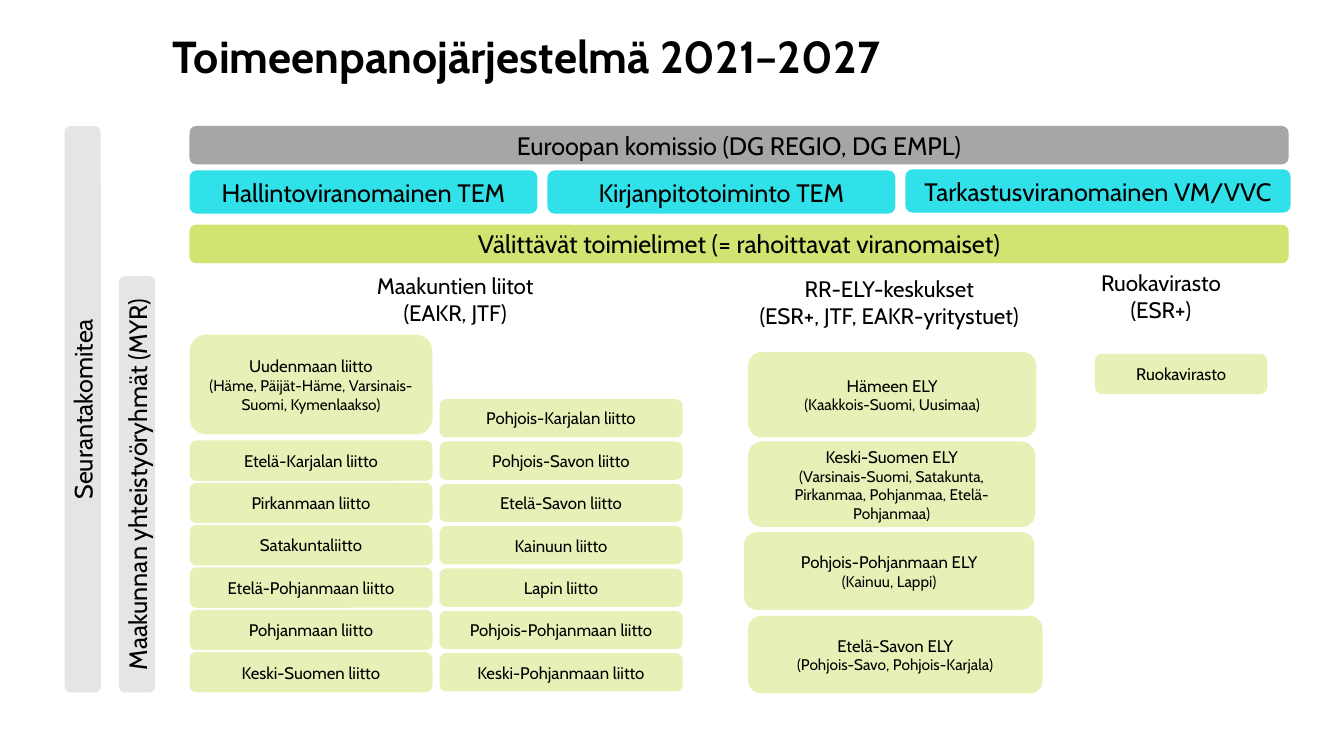
from lxml.etree import SubElement
from pptx import Presentation
from pptx.dml.color import RGBColor
from pptx.enum.shapes import MSO_SHAPE
from pptx.enum.text import MSO_ANCHOR, MSO_AUTO_SIZE, PP_ALIGN
from pptx.oxml.ns import qn
from pptx.util import Inches, Pt

HUES = {"text": "000000", "grey": "A6A6A6", "pale": "E5E5E5",
        "cyan": "31E1E9", "lime": "D1E371"}
FONT = "Cabin"
CELL = Inches(0.1)
LEFT, TOP, STEP = 18.8, 12.5, 4.2
WIDE, FULL = 24.1, 109

HEADS = [
    ("Maakuntien liitot (EAKR, JTF)", 34.6, 27, 21.1),
    ("RR-ELY-keskukset\n(ESR+, JTF, EAKR-yritystuet)", 73.6, 27.3, 29.2),
    ("Ruokavirasto\n(ESR+)", 104.6, 26.7, 21.1),
]
ROLES = [
    ("Hallintoviranomainen TEM", LEFT, 16.9, 34.5),
    ("Kirjanpitotoiminto TEM", 54.3, 16.9, 34.5),
    ("Tarkastusviranomainen VM/VVC", 89.8, 16.8, 38.2),
]
UNIONS = [
    (LEFT, 43.7, 4, ["Etelä-Karjalan liitto", "Pirkanmaan liitto",
                     "Satakuntaliitto", "Etelä-Pohjanmaan liitto",
                     "Pohjanmaan liitto", "Keski-Suomen liitto"]),
    (43.6, 39.6, 3.8, ["Pohjois-Karjalan liitto", "Pohjois-Savon liitto",
                       "Etelä-Savon liitto", "Kainuun liitto",
                       "Lapin liitto", "Pohjois-Pohjanmaan liitto",
                       "Keski-Pohjanmaan liitto"]),
]
UNITS = [
    ("Uudenmaan liitto\n(Häme, Päijät-Häme, Varsinais-Suomi, Kymenlaakso)",
     LEFT, 33.2, WIDE, 9.9),
    ("Hämeen ELY\n(Kaakkois-Suomi, Uusimaa)", 74.2, 34.9, 28.6, 8.5),
    ("Keski-Suomen ELY\n(Varsinais-Suomi, Satakunta, Pirkanmaa, Pohjanmaa, "
     "Etelä-Pohjanmaa)", 74.2, 43.8, 28.5, 8.5),
    ("Pohjois-Pohjanmaan ELY\n(Kainuu, Lappi)", 73.8, 52.8, 28.8, 7.7),
    ("Etelä-Savon ELY\n(Pohjois-Savo, Pohjois-Karjala)",
     74.2, 61.1, 29.2, 7.7),
    ("Ruokavirasto", 108.6, 35.1, 17.1, 4),
]


def grid(*cells):
    """Turn columns and rows into lengths."""
    return [round(n * CELL) for n in cells]


def write(frame, text, size=18, small=None, bold=False,
          align=PP_ALIGN.CENTER):
    """Fill a frame with one paragraph per line; later lines may be small."""
    frame.word_wrap = True
    for i, line in enumerate(text.split("\n")):
        para = frame.add_paragraph() if i else frame.paragraphs[0]
        para.alignment = align
        run = para.add_run()
        run.text = line
        font = run.font
        font.name, font.bold = FONT, bold
        font.size = Pt(small if i and small else size)
        font.color.rgb = RGBColor.from_string(HUES["text"])


def bare(frame):
    """Remove the margins of a frame."""
    frame.margin_left = frame.margin_right = 0
    frame.margin_top = frame.margin_bottom = 0


def block(slide, text, x, y, w, h, hue, clear=False, turn=False, **form):
    """Draw a rounded block with text."""
    shape = slide.shapes.add_shape(MSO_SHAPE.ROUNDED_RECTANGLE,
                                   *grid(x, y, w, h))
    shape.shadow.inherit = False
    shape.line.fill.background()
    shape.fill.solid()
    shape.fill.fore_color.rgb = RGBColor.from_string(HUES[hue])
    if clear:
        tint = next(shape.element.spPr.iter(qn("a:srgbClr")))
        SubElement(tint, qn("a:alpha"), val="50000")
    if turn:
        shape.element.txBody.bodyPr.set("vert", "vert270")
    shape.text_frame.vertical_anchor = MSO_ANCHOR.MIDDLE
    write(shape.text_frame, text, **form)


def label(slide, text, x, y, w):
    """Add a heading above a group of blocks."""
    frame = slide.shapes.add_textbox(*grid(x, y, w, 5.4)).text_frame
    bare(frame)
    write(frame, text, size=16)


def title(slide, text):
    """Place and fill the title."""
    shape = slide.shapes.title
    shape.left, shape.top, shape.width, shape.height = grid(
        17.1, 2.8, 103.1, 5.4)
    frame = shape.text_frame
    bare(frame)
    frame.auto_size = MSO_AUTO_SIZE.NONE
    frame.vertical_anchor = MSO_ANCHOR.TOP
    write(frame, text, size=32, bold=True, align=PP_ALIGN.LEFT)


def main():
    """Build the slide and save it."""
    deck = Presentation()
    deck.slide_width, deck.slide_height = Inches(13.33), Inches(7.5)
    slide = deck.slides.add_slide(deck.slide_layouts[5])
    title(slide, "Toimeenpanojärjestelmä 2021–2027")
    block(slide, "Euroopan komissio (DG REGIO, DG EMPL)",
          LEFT, TOP, FULL, 3.8, "grey")
    for text, x, y, w in ROLES:
        block(slide, text, x, y, w, 4.3, "cyan")
    block(slide, "Välittävät toimielimet (= rahoittavat viranomaiset)",
          LEFT, 22.3, FULL, 3.8, "lime")
    for head in HEADS:
        label(slide, *head)
    for x, y, h, names in UNIONS:
        for i, name in enumerate(names):
            block(slide, name, x, y + i * STEP, WIDE, h, "lime",
                  clear=True, size=12)
    for unit in UNITS:
        block(slide, *unit, "lime", clear=True, size=12, small=11)
    block(slide, "Seurantakomitea", 6.4, TOP, 3.6, 56.2, "pale", turn=True)
    block(slide, "Maakunnan yhteistyöryhmät (MYR)",
          11.8, 27.4, 3.6, 41.3, "pale", turn=True)
    deck.save("out.pptx")


if __name__ == "__main__":
    main()
